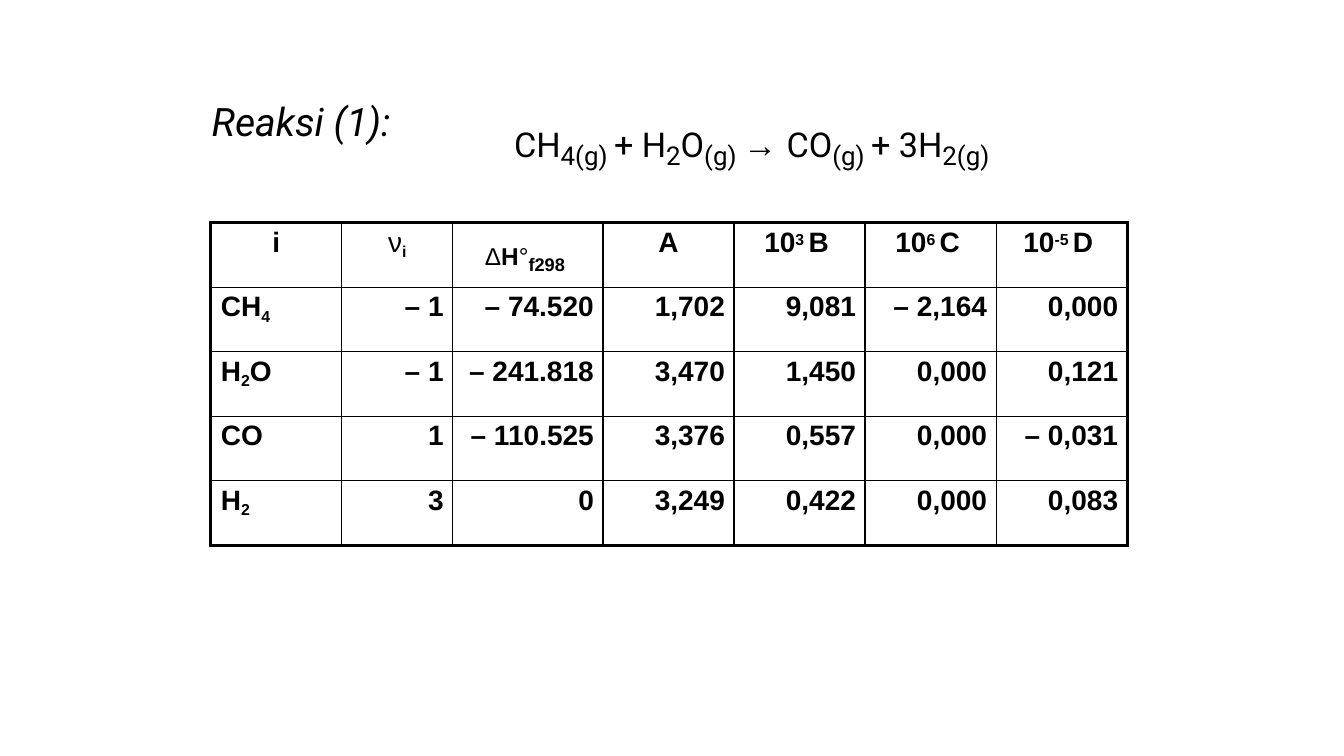
from collections import namedtuple
from itertools import cycle

from lxml import etree
from pptx import Presentation
from pptx.dml.color import RGBColor
from pptx.enum.text import MSO_ANCHOR, MSO_AUTO_SIZE, PP_ALIGN
from pptx.oxml.ns import qn
from pptx.util import Inches, Pt

BLACK = RGBColor(0x00, 0x00, 0x00)
LEFT, CENTER, RIGHT = PP_ALIGN.LEFT, PP_ALIGN.CENTER, PP_ALIGN.RIGHT
TOP, GROW = MSO_ANCHOR.TOP, MSO_AUTO_SIZE.SHAPE_TO_FIT_TEXT

Look = namedtuple("Look", "size base bold italic face", defaults=(0, False, False, "Arial"))

TITLE = Look(28, italic=True, face="Roboto")
BIG = Look(42, 14, face="Roboto")
SMALL = Look(18.5, face="Roboto")
ARROW = Look(42, 14)
BOLD = Look(20, bold=True)
PLAIN = Look(20)
SUB = Look(19.5, -21, True)
SUPER = Look(19.5, 26, True)
DELTA = Look(30, 14)
HEAT = Look(30, 14, True)
INDEX = Look(13, bold=True)

COLS = [1.3, 1.1, 1.49, 1.3, 1.3, 1.3, 1.3]
ROW = 0.64
PAD = 0.09
THIN, THICK = 1, 2.25

HEAD = [
    ("i", [BOLD], CENTER, 0, 0.04),
    ("ν|i", [PLAIN, SUB], CENTER, 0, 0.04),
    ("Δ|H|°|f298", [DELTA, HEAT, DELTA, INDEX], LEFT, 0.32, 0.11),
    ("A", [BOLD], CENTER, 0, 0.04),
    ("10|3 |B", [BOLD, SUPER], LEFT, 0.3, 0.04),
    ("10|6 |C", [BOLD, SUPER], LEFT, 0.3, 0.04),
    ("10|-5 |D", [BOLD, SUPER], LEFT, 0.27, 0.04),
]
DATA = [
    ["CH|4", "– 1", "– 74.520", "1,702", "9,081", "– 2,164", "0,000"],
    ["H|2|O", "– 1", "– 241.818", "3,470", "1,450", "0,000", "0,121"],
    ["CO", "1", "– 110.525", "3,376", "0,557", "0,000", "– 0,031"],
    ["H|2", "3", "0", "3,249", "0,422", "0,000", "0,083"],
]


class Page:
    """Holds the current slide and draws its text and table in one style."""

    def __init__(self, deck):
        """Add a slide that has only a title."""
        self.slide = deck.slides.add_slide(deck.slide_layouts[5])

    def text(self, para, words, looks):
        """Add the parts of words between bars, taking the looks in turn."""
        for part, look in zip(words.split("|"), cycle(looks)):
            run = para.add_run()
            run.text = part
            font = run.font
            font.name, font.size = look.face, Pt(look.size)
            font.bold, font.italic = look.bold, look.italic
            font.color.rgb = BLACK
            if look.base:
                run._r.get_or_add_rPr().set("baseline", str(look.base * 1000))

    def frame(self, shape, indent):
        """Set up the text frame of a shape and return its paragraph."""
        frame = shape.text_frame
        frame.word_wrap, frame.auto_size = True, GROW
        frame.vertical_anchor = TOP
        frame.margin_left, frame.margin_top = Inches(indent), Inches(0.02)
        frame.margin_right = frame.margin_bottom = 0
        para = frame.paragraphs[0]
        para.alignment = LEFT
        return para

    def title(self, words, left, top, width, height):
        """Place and fill the title."""
        shape = self.slide.shapes.title
        shape.left, shape.top = Inches(left), Inches(top)
        shape.width, shape.height = Inches(width), Inches(height)
        self.text(self.frame(shape, 0.01), words, [TITLE])

    def formula(self, parts, left, top, width, height):
        """Add a text box with a chemical equation."""
        box = self.slide.shapes.add_textbox(
            Inches(left), Inches(top), Inches(width), Inches(height))
        para = self.frame(box, 0.04)
        for words, looks in parts:
            self.text(para, words, looks)

    def border(self, cell, widths):
        """Draw the four sides of a cell in the given widths."""
        props = cell._tc.get_or_add_tcPr()
        for side, width in zip("LRTB", widths):
            line = etree.SubElement(props, qn(f"a:ln{side}"), w=str(Pt(width)))
            fill = etree.SubElement(line, qn("a:solidFill"))
            etree.SubElement(fill, qn("a:srgbClr"), val=str(BLACK))

    def cell(self, cell, words, looks, align, indent, top):
        """Fill one table cell."""
        cell.fill.background()
        cell.margin_left, cell.margin_top = Inches(indent), Inches(top)
        cell.margin_right = Inches(PAD if align == RIGHT else 0)
        cell.margin_bottom = 0
        para = cell.text_frame.paragraphs[0]
        para.alignment = align
        self.text(para, words, looks)

    def table(self, left, top):
        """Add the table of reaction data."""
        rows = [HEAD]
        for name, *values in DATA:
            rows.append([(name, [BOLD, SUB], LEFT, 0.1, 0.04)]
                        + [(value, [BOLD], RIGHT, 0, 0.04) for value in values])
        last, end = len(rows) - 1, len(COLS) - 1
        table = self.slide.shapes.add_table(
            len(rows), len(COLS), Inches(left), Inches(top),
            Inches(sum(COLS)), Inches(ROW * len(rows))).table
        table.first_row = table.horz_banding = False
        for col, width in zip(table.columns, COLS):
            col.width = Inches(width)
        for y, row in enumerate(rows):
            table.rows[y].height = Inches(ROW)
            for x, item in enumerate(row):
                cell = table.cell(y, x)
                edges = (x == 0, x == end, y == 0, y == last)
                self.border(cell, [THICK if edge else THIN for edge in edges])
                self.cell(cell, *item)


def main():
    """Build the slide and save it."""
    deck = Presentation()
    deck.slide_width, deck.slide_height = Inches(13.33), Inches(7.5)
    page = Page(deck)
    page.table(2.09, 2.21)
    page.title("Reaksi (1):", 2.09, 0.94, 1.91, 0.49)
    page.formula([
        ("CH|4(g) |+ H|2|O|(g) ", [BIG, SMALL]),
        ("→ ", [ARROW]),
        ("CO|(g) |+ 3H|2(g)", [BIG, SMALL]),
    ], 5.06, 1.04, 5.5, 0.49)
    deck.save("out.pptx")


if __name__ == "__main__":
    main()
